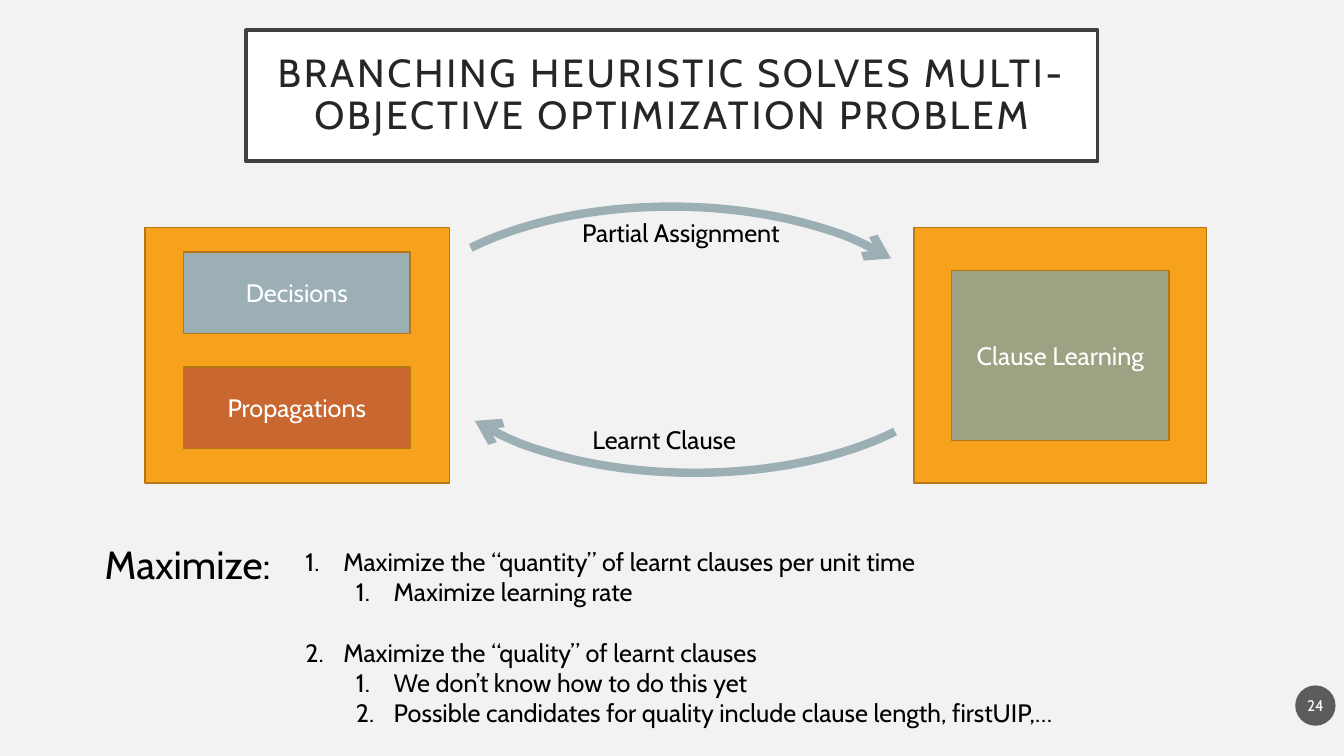
from pptx import Presentation
from pptx.dml.color import RGBColor
from pptx.enum.shapes import MSO_SHAPE
from pptx.enum.text import MSO_ANCHOR, MSO_AUTO_SIZE, PP_ALIGN
from pptx.oxml.ns import qn
from pptx.util import Pt
from lxml.etree import SubElement

FONT = "Cabin"
PAPER = RGBColor(0xF2, 0xF2, 0xF2)
WHITE = RGBColor(0xFF, 0xFF, 0xFF)
BLACK = RGBColor(0x00, 0x00, 0x00)
INK = RGBColor(0x26, 0x26, 0x26)
FRAME = RGBColor(0x40, 0x40, 0x40)
ORANGE = RGBColor(0xF6, 0xA2, 0x1D)
BROWN = RGBColor(0xB6, 0x78, 0x15)
STEEL = RGBColor(0x9B, 0xAF, 0xB5)
RUST = RGBColor(0xC9, 0x67, 0x31)
SAGE = RGBColor(0x9C, 0xA3, 0x83)
BADGE = RGBColor(0x1D, 0x1D, 0x1D)

HEADING = "BRANCHING HEURISTIC SOLVES MULTI-OBJECTIVE OPTIMIZATION PROBLEM"
HEADING_AREA = (175.7, 21.6, 608.4, 93.6)
BOXES = [
    ("", (103.7, 162.7, 217.4, 182.2), ORANGE),
    ("Decisions", (131, 180, 162, 58.3), STEEL),
    ("Propagations", (131, 262.1, 162, 58.3), RUST),
    ("", (653, 162.7, 208.8, 182.2), ORANGE),
    ("Clause Learning", (679.7, 193, 155.5, 121.7), SAGE),
]
ARCS = [
    ("Partial Assignment", (278.6, 147.6, 401.8, 197.3), 0),
    ("", (295.2, 140.4, 401.8, 197.3), 180),
]
ARC_SWEEP = (123.47, 203.15)
LABELS = [
    ("Learnt Clause", (323.3, 299.5, 302.4, 28.8), 18, PP_ALIGN.CENTER),
    ("Maximize:", (67.7, 382.3, 137.5, 41), 28, PP_ALIGN.LEFT),
]
GOALS = [
    (0, "Maximize the “quantity” of learnt clauses per unit time"),
    (1, "Maximize learning rate"),
    (0, "Maximize the “quality” of learnt clauses"),
    (1, "We don’t know how to do this yet"),
    (1, "Possible candidates for quality include clause length, firstUIP,…"),
]
GOALS_AREA = (211, 386.6, 569.5, 138.2)
GOAL_GAP = 21.6
NUMBER_INDENT = 27
LEVEL_INDENT = 36
PAGE = "24"
PAGE_AREA = (925.2, 489.6, 28.8, 28.8)


def points(area):
    return [Pt(length) for length in area]


def place(part, area):
    part.left, part.top, part.width, part.height = points(area)


def write(paragraph, text, *, size=18, color=BLACK, align=PP_ALIGN.LEFT, tracking=0):
    paragraph.alignment = align
    run = paragraph.add_run()
    run.text = text
    run.font.name = FONT
    run.font.size = Pt(size)
    run.font.color.rgb = color
    if tracking:
        run.font._element.set("spc", str(tracking * 100))


def set_frame(frame, anchor, inset_x=7.2, inset_y=3.6):
    frame.word_wrap = True
    frame.auto_size = MSO_AUTO_SIZE.NONE
    frame.vertical_anchor = anchor
    frame.margin_left = frame.margin_right = Pt(inset_x)
    frame.margin_top = frame.margin_bottom = Pt(inset_y)


def paint(part, fill, line, width):
    if fill is None:
        part.fill.background()
    else:
        part.fill.solid()
        part.fill.fore_color.rgb = fill
    if line is None:
        part.line.fill.background()
    else:
        part.line.color.rgb = line
        part.line.width = Pt(width)


def add_preset(slide, preset, area, fill, line=None, width=1):
    part = slide.shapes.add_shape(preset, *points(area))
    part.shadow.inherit = False
    paint(part, fill, line, width)
    set_frame(part.text_frame, MSO_ANCHOR.MIDDLE)
    return part


def add_goals(body):
    place(body, GOALS_AREA)
    frame = body.text_frame
    set_frame(frame, MSO_ANCHOR.TOP)
    for index, (level, goal) in enumerate(GOALS):
        paragraph = frame.add_paragraph() if index else frame.paragraphs[0]
        paragraph.level = level
        paragraph.space_before = Pt(GOAL_GAP if index and level == 0 else 0)
        write(paragraph, goal)
        properties = paragraph._p.get_or_add_pPr()
        properties.set("marL", str(Pt(NUMBER_INDENT + level * LEVEL_INDENT)))
        properties.set("indent", str(-Pt(NUMBER_INDENT)))
        SubElement(properties, qn("a:buFont")).set("typeface", FONT)
        SubElement(properties, qn("a:buAutoNum")).set("type", "arabicPeriod")


def main():
    deck = Presentation()
    deck.slide_width, deck.slide_height = Pt(960), Pt(540)
    slide = deck.slides.add_slide(deck.slide_layouts[1])
    slide.background.fill.solid()
    slide.background.fill.fore_color.rgb = PAPER

    heading = slide.shapes.title
    place(heading, HEADING_AREA)
    paint(heading, WHITE, FRAME, 2.5)
    set_frame(heading.text_frame, MSO_ANCHOR.MIDDLE, 14.4, 14.4)
    heading_line = heading.text_frame.paragraphs[0]
    heading_line.line_spacing = 0.9
    write(heading_line, HEADING, size=28, color=INK, align=PP_ALIGN.CENTER, tracking=2)

    for name, area, fill in BOXES:
        box = add_preset(slide, MSO_SHAPE.RECTANGLE, area, fill, BROWN)
        if name:
            write(box.text_frame.paragraphs[0], name, color=WHITE, align=PP_ALIGN.CENTER)

    for name, area, rotation in ARCS:
        arc = add_preset(slide, MSO_SHAPE.ARC, area, None, STEEL, 6)
        arc.adjustments[0], arc.adjustments[1] = ARC_SWEEP
        arc.rotation = rotation
        SubElement(arc.line._get_or_add_ln(), qn("a:tailEnd")).set("type", "arrow")
        if name:
            write(arc.text_frame.paragraphs[0], name, align=PP_ALIGN.CENTER)

    for name, area, size, align in LABELS:
        label = slide.shapes.add_textbox(*points(area))
        set_frame(label.text_frame, MSO_ANCHOR.TOP)
        write(label.text_frame.paragraphs[0], name, size=size, align=align)

    add_goals(slide.placeholders[1])

    badge = add_preset(slide, MSO_SHAPE.OVAL, PAGE_AREA, BADGE)
    set_frame(badge.text_frame, MSO_ANCHOR.MIDDLE, 1.44)
    badge_color = badge._element.spPr.find(qn("a:solidFill"))[0]
    SubElement(badge_color, qn("a:alpha")).set("val", "70000")
    write(badge.text_frame.paragraphs[0], PAGE, size=11, color=WHITE, align=PP_ALIGN.CENTER)

    deck.save("out.pptx")


if __name__ == "__main__":
    main()
